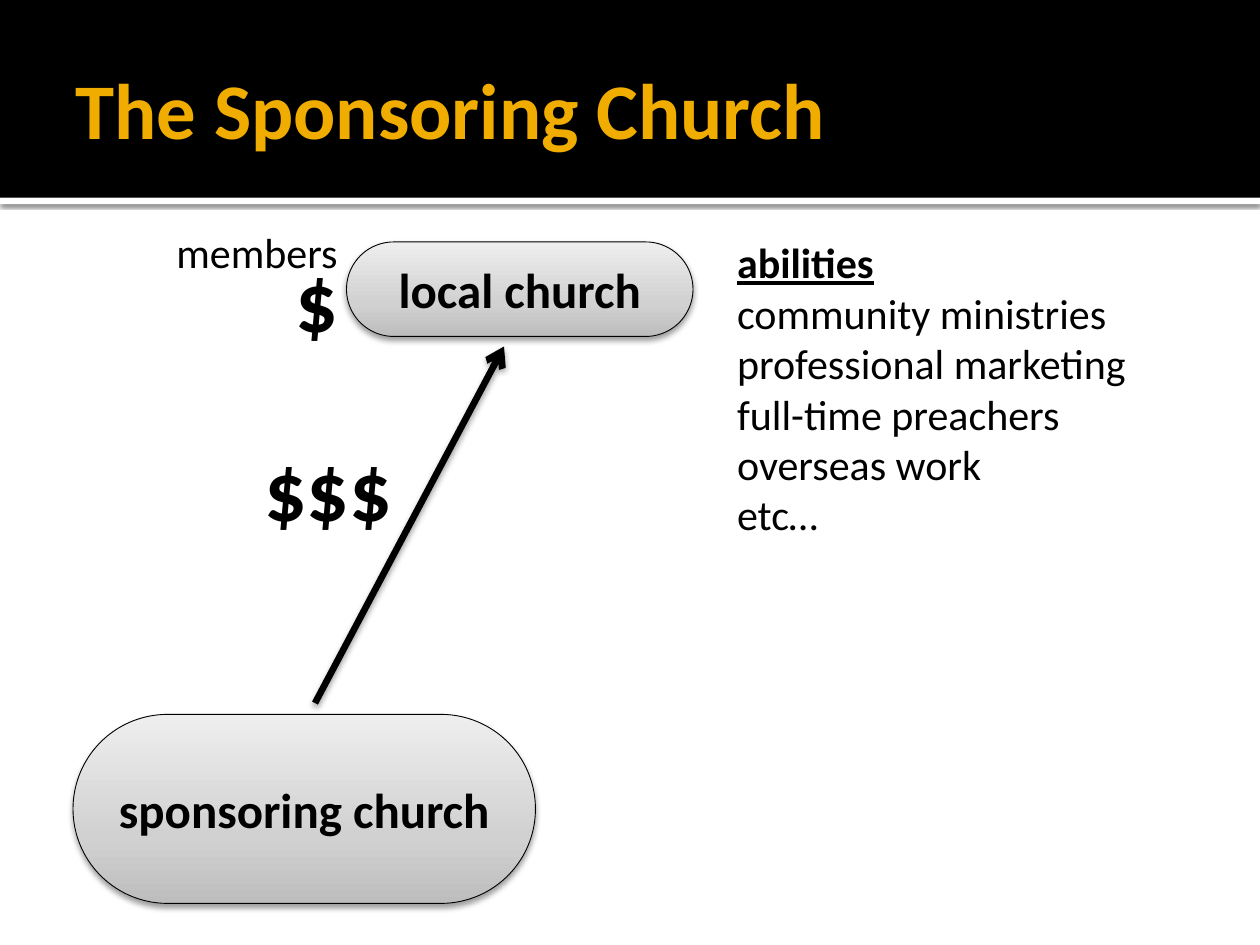
from dataclasses import dataclass

from pptx import Presentation
from pptx.dml.color import RGBColor
from pptx.enum.shapes import MSO_CONNECTOR, MSO_SHAPE
from pptx.enum.text import MSO_ANCHOR, MSO_AUTO_SIZE, PP_ALIGN
from pptx.oxml import parse_xml
from pptx.oxml.ns import nsdecls, qn
from pptx.util import Inches, Pt

RECT, ROUND = MSO_SHAPE.RECTANGLE, MSO_SHAPE.ROUNDED_RECTANGLE
STRAIGHT = MSO_CONNECTOR.STRAIGHT
LEFT, CENTER = PP_ALIGN.LEFT, PP_ALIGN.CENTER
TOP, MIDDLE = MSO_ANCHOR.TOP, MSO_ANCHOR.MIDDLE
FIT_NONE, FIT_SHAPE = MSO_AUTO_SIZE.NONE, MSO_AUTO_SIZE.SHAPE_TO_FIT_TEXT


@dataclass(frozen=True)
class Theme:
    font: str = "Calibri"
    ink: str = "000000"
    paper: str = "FFFFFF"
    accent: str = "F0AD00"
    pill: tuple = ((0, "BDBDBD"), (35, "D1D1D1"), (100, "EEEEEE"))
    title: int = 45
    money: int = 48
    label: int = 28
    body: int = 24
    outline: float = 0.5
    arrow: float = 3.78
    soft: tuple = (38, 3.5, 2)
    crisp: tuple = (60, 2.5, 0.8)


def apply(obj, **values):
    for name, value in values.items():
        setattr(obj, name, value)


class Deck:
    """Draws styled elements on the current slide."""

    def __init__(self, prs, theme):
        self.theme = theme
        self.s = prs.slides.add_slide(prs.slide_layouts[1])

    def place(self, sp, box):
        names = ("left", "top", "width", "height")
        apply(sp, **dict(zip(names, map(Inches, box))))

    def fill_text(self, p, text, size, color=None, align=LEFT, **font):
        apply(p, alignment=align, space_before=Pt(0))
        r = p.add_run()
        r.text = text
        apply(r.font, name=self.theme.font, size=Pt(size), **font)
        r.font.color.rgb = RGBColor.from_string(color or self.theme.ink)

    def shadow(self, sp, alpha, blur, dist):
        sp._element.spPr.append(parse_xml(
            f'<a:effectLst {nsdecls("a")}><a:outerShdw blurRad="{Pt(blur)}" '
            f'dist="{Pt(dist)}" dir="5400000" rotWithShape="0">'
            f'<a:srgbClr val="{self.theme.ink}"><a:alpha val="{alpha * 1000}"/>'
            '</a:srgbClr></a:outerShdw></a:effectLst>'))

    def band(self, box, color, shadow=None):
        sp = self.s.shapes.add_shape(RECT, *map(Inches, box))
        sp.fill.solid()
        sp.fill.fore_color.rgb = RGBColor.from_string(color)
        sp.line.fill.background()
        if shadow:
            self.shadow(sp, *shadow)
        else:
            sp.shadow.inherit = False
        self.s.shapes._spTree.insert(2, sp._element)

    def title(self, box, text):
        sp = self.s.shapes.title
        self.place(sp, box)
        tf = sp.text_frame
        apply(tf, vertical_anchor=MIDDLE, auto_size=FIT_NONE, margin_right=Inches(0.05))
        self.fill_text(tf.paragraphs[0], text, self.theme.title, self.theme.accent, bold=True)

    def bullets(self, box, heading, items):
        sp = self.s.placeholders[1]
        self.place(sp, box)
        tf = sp.text_frame
        apply(tf, vertical_anchor=TOP, auto_size=FIT_NONE)
        for i, text in enumerate([heading, *items]):
            p = tf.paragraphs[0] if i == 0 else tf.add_paragraph()
            self.fill_text(p, text, self.theme.body, bold=i == 0, underline=i == 0)
            pPr = p._p.get_or_add_pPr()
            pPr.set("marL", "0")
            pPr.set("indent", "0")
            pPr.append(parse_xml(f'<a:buNone {nsdecls("a")}/>'))

    def pill(self, box, text):
        sp = self.s.shapes.add_shape(ROUND, *map(Inches, box))
        sp.adjustments[0] = 0.5
        sp.fill.gradient()
        sp.fill.gradient_angle = 90
        stops = sp._element.spPr.find(qn("a:gradFill")).find(qn("a:gsLst"))
        for stop in list(stops):
            stops.remove(stop)
        for pos, color in self.theme.pill:
            stops.append(parse_xml(f'<a:gs {nsdecls("a")} pos="{pos * 1000}">'
                                   f'<a:srgbClr val="{color}"/></a:gs>'))
        self.outline(sp, self.theme.outline)
        self.shadow(sp, *self.theme.soft)
        tf = sp.text_frame
        apply(tf, vertical_anchor=MIDDLE, word_wrap=True)
        self.fill_text(tf.paragraphs[0], text, self.theme.label, align=CENTER, bold=True)

    def outline(self, sp, width):
        sp.line.color.rgb = RGBColor.from_string(self.theme.ink)
        sp.line.width = Pt(width)

    def arrow(self, start, end):
        sp = self.s.shapes.add_connector(STRAIGHT, *map(Inches, start + end))
        self.outline(sp, self.theme.arrow)
        ln = sp._element.spPr.find(qn("a:ln"))
        ln.append(parse_xml(f'<a:tailEnd {nsdecls("a")} type="arrow"/>'))
        self.shadow(sp, *self.theme.soft)

    def text(self, box, text, size, wrap=False, **style):
        tf = self.s.shapes.add_textbox(*map(Inches, box)).text_frame
        apply(tf, word_wrap=wrap, auto_size=FIT_SHAPE)
        self.fill_text(tf.paragraphs[0], text, size, **style)


def main():
    prs = Presentation()
    apply(prs, slide_width=Inches(10), slide_height=Inches(7.5))
    theme = Theme()
    deck = Deck(prs, theme)
    deck.band((0, 0, 10, 1.57), theme.ink)
    deck.band((0, 1.57, 10, 0.05), theme.paper, theme.crisp)
    deck.title((0.5, 0.17, 9, 1.37), "The Sponsoring Church")
    deck.bullets((5.75, 1.83, 3.83, 2.52), "abilities", [
        "community ministries", "professional marketing",
        "full-time preachers", "overseas work", "etc…"])
    deck.pill((2.75, 1.92, 2.75, 0.75), "local church")
    deck.pill((0.58, 5.67, 3.67, 1.5), "sponsoring church")
    deck.arrow((2.5, 5.58), (4, 2.75))
    deck.text((2, 3.42, 1.27, 0.91), "$$$", theme.money, bold=True)
    deck.text((1.08, 1.75, 1.92, 0.5), "members", theme.body, wrap=True, align=CENTER)
    deck.text((2.25, 1.92, 0.56, 0.91), "$", theme.money, bold=True)
    prs.save("out.pptx")


if __name__ == "__main__":
    main()
